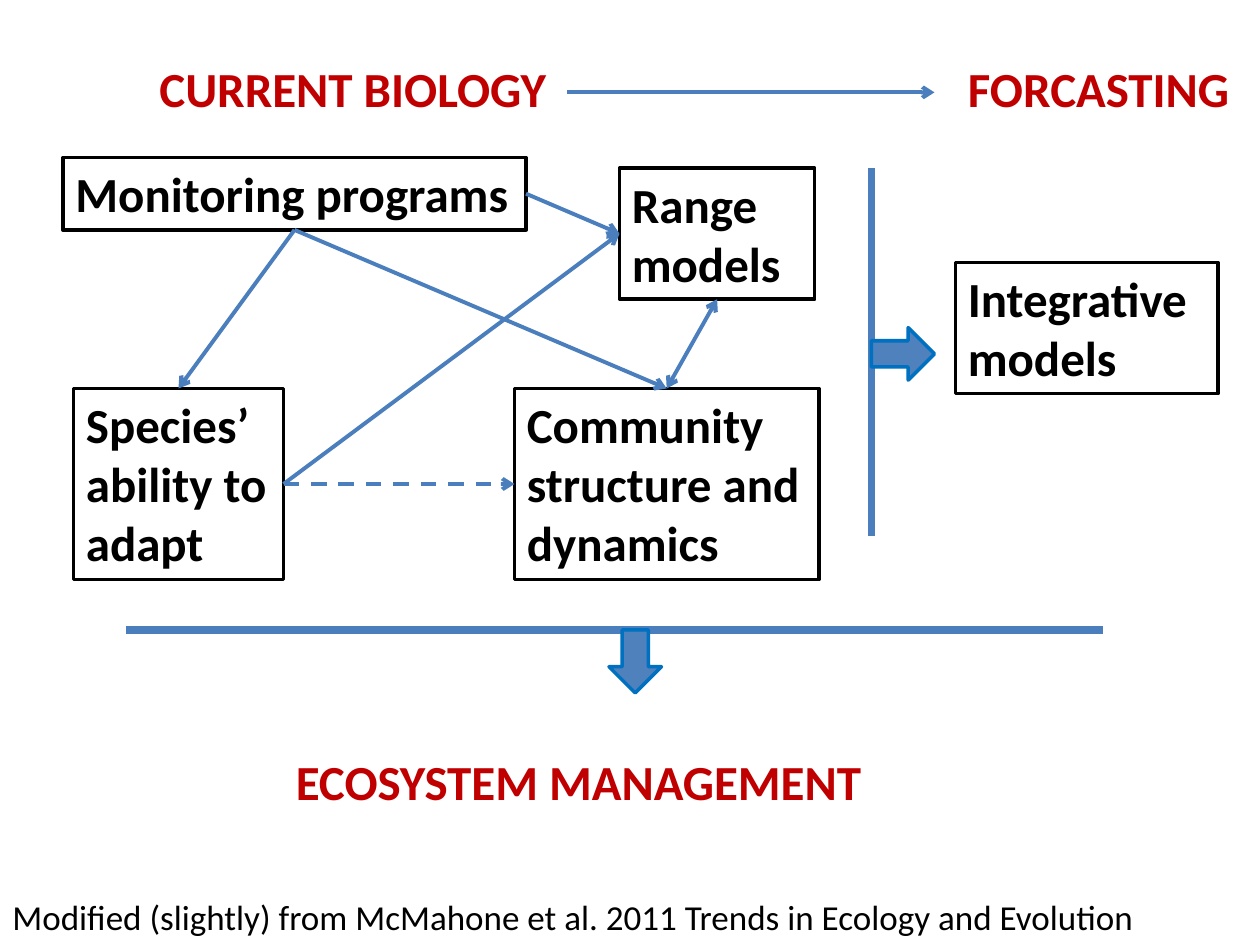
import pptx
import pptx.dml.color
import pptx.enum.dml
import pptx.enum.shapes
import pptx.enum.text
import pptx.oxml
import pptx.oxml.ns
import pptx.util
from dataclasses import dataclass

EMU_PER_PX = 7620
TOP, LEFT, BOTTOM, RIGHT = range(4)


@dataclass(frozen=True)
class Theme:
    """Colours, type sizes and line widths of the slide."""
    font: str = "Calibri"
    ink: str = "000000"
    paper: str = "FFFFFF"
    accent: str = "C00000"
    link: str = "4B7EBC"
    arrow_fill: str = "4F81BD"
    arrow_line: str = "0070C0"
    label_size: int = 28
    source_size: int = 20
    border: float = 2
    link_width: float = 2.25
    bar_width: float = 4.5


THEME = Theme()


def px(*lengths):
    """Turn pixel lengths into EMU."""
    return [pptx.util.Emu(n * EMU_PER_PX) for n in lengths]


def rgb(value):
    """Turn a hex string into a colour."""
    return pptx.dml.color.RGBColor.from_string(value)


def set_all(target, formats):
    """Set each attribute named in a dict of format values."""
    for name, value in formats.items():
        setattr(target, name, value)


def paint(sp, fill, line):
    """Give a shape a solid fill and a border, without shadow."""
    sp.shadow.inherit = False
    sp.fill.solid()
    sp.fill.fore_color.rgb = rgb(fill)
    sp.line.color.rgb = rgb(line)
    sp.line.width = pptx.util.Pt(THEME.border)


def write(sp, text, color=THEME.ink, size=THEME.label_size, bold=True, wrap=True):
    """Write left-aligned text from the top of a shape that fits its text."""
    tf = sp.text_frame
    set_all(tf, {
        "word_wrap": wrap,
        "auto_size": pptx.enum.text.MSO_AUTO_SIZE.SHAPE_TO_FIT_TEXT,
        "vertical_anchor": pptx.enum.text.MSO_ANCHOR.TOP,
    })
    p = tf.paragraphs[0]
    p.alignment = pptx.enum.text.PP_ALIGN.LEFT
    r = p.add_run()
    r.text = text
    set_all(r.font, {"name": THEME.font, "size": pptx.util.Pt(size), "bold": bold})
    r.font.color.rgb = rgb(color)


def add_box(shapes, text, box, wrap=True):
    """Add a bordered box with a label."""
    sp = shapes.add_shape(pptx.enum.shapes.MSO_SHAPE.RECTANGLE, *px(*box))
    paint(sp, THEME.paper, THEME.ink)
    write(sp, text, wrap=wrap)
    return sp


def add_text(shapes, text, box, **formats):
    """Add a text box without border."""
    write(shapes.add_textbox(*px(*box)), text, **formats)


def add_line(shapes, ends, width=THEME.link_width, heads=(), dashed=False):
    """Add a straight line with arrowheads at the named ends."""
    c = shapes.add_connector(pptx.enum.shapes.MSO_CONNECTOR.STRAIGHT, *px(*ends))
    c.line.color.rgb = rgb(THEME.link)
    c.line.width = pptx.util.Pt(width)
    if dashed:
        c.line.dash_style = pptx.enum.dml.MSO_LINE.DASH
    ln = c.line._get_or_add_ln()
    for head in heads:
        end = pptx.oxml.parse_xml(
            f'<a:{head} {pptx.oxml.ns.nsdecls("a")} type="arrow"/>')
        ln.append(end)
    c._element.spPr.append(pptx.oxml.parse_xml(
        f'<a:effectLst {pptx.oxml.ns.nsdecls("a")}/>'))
    return c


def join(shapes, start, start_side, end, end_side, heads=("tailEnd",), dashed=False):
    """Join the middles of two box sides with an arrow."""
    c = add_line(shapes, (0, 0, 0, 0), heads=heads, dashed=dashed)
    c.begin_connect(start, start_side)
    c.end_connect(end, end_side)


def add_block_arrow(shapes, left, top, rotation=0):
    """Add a block arrow that points down before it is turned."""
    sp = shapes.add_shape(pptx.enum.shapes.MSO_SHAPE.DOWN_ARROW, *px(left, top, 50, 60))
    paint(sp, THEME.arrow_fill, THEME.arrow_line)
    sp.rotation = rotation


def main():
    """Build the slide and save it."""
    prs = pptx.Presentation()
    prs.slide_width, prs.slide_height = px(1200, 900)
    shapes = prs.slides.add_slide(prs.slide_layouts[6]).shapes

    monitoring = add_box(shapes, "Monitoring programs", (60, 150, 441, 69), wrap=False)
    species = add_box(shapes, "Species’ ability to adapt", (70, 370, 200, 182))
    ranges = add_box(shapes, "Range models", (590, 160, 186, 125))
    community = add_box(shapes, "Community structure and dynamics", (490, 370, 290, 182))
    add_box(shapes, "Integrative models", (910, 250, 250, 125))

    join(shapes, monitoring, BOTTOM, species, TOP)
    join(shapes, monitoring, BOTTOM, community, TOP)
    join(shapes, monitoring, RIGHT, ranges, LEFT)
    join(shapes, ranges, BOTTOM, community, TOP, heads=("headEnd", "tailEnd"))
    join(shapes, species, RIGHT, ranges, LEFT)
    join(shapes, species, RIGHT, community, LEFT, dashed=True)

    for text, box in (
        ("CURRENT BIOLOGY", (140, 50, 397, 69)),
        ("FORCASTING", (910, 50, 276, 69)),
        ("ECOSYSTEM MANAGEMENT", (270, 710, 569, 69)),
    ):
        add_text(shapes, text, box, color=THEME.accent, wrap=False)
    add_line(shapes, (540, 88, 890, 88), heads=("tailEnd",))

    management = shapes.add_group_shape().shapes
    add_line(management, (120, 600, 1050, 600), THEME.bar_width)
    add_block_arrow(management, 580, 600)
    add_line(shapes, (830, 510, 830, 160), THEME.bar_width)
    add_block_arrow(shapes, 835, 307, rotation=270)

    add_text(
        shapes,
        "Modified (slightly) from McMahone et al. 2011 Trends in Ecology and Evolution",
        (0, 847, 1200, 53), size=THEME.source_size, bold=False)
    prs.save("out.pptx")


if __name__ == "__main__":
    main()
